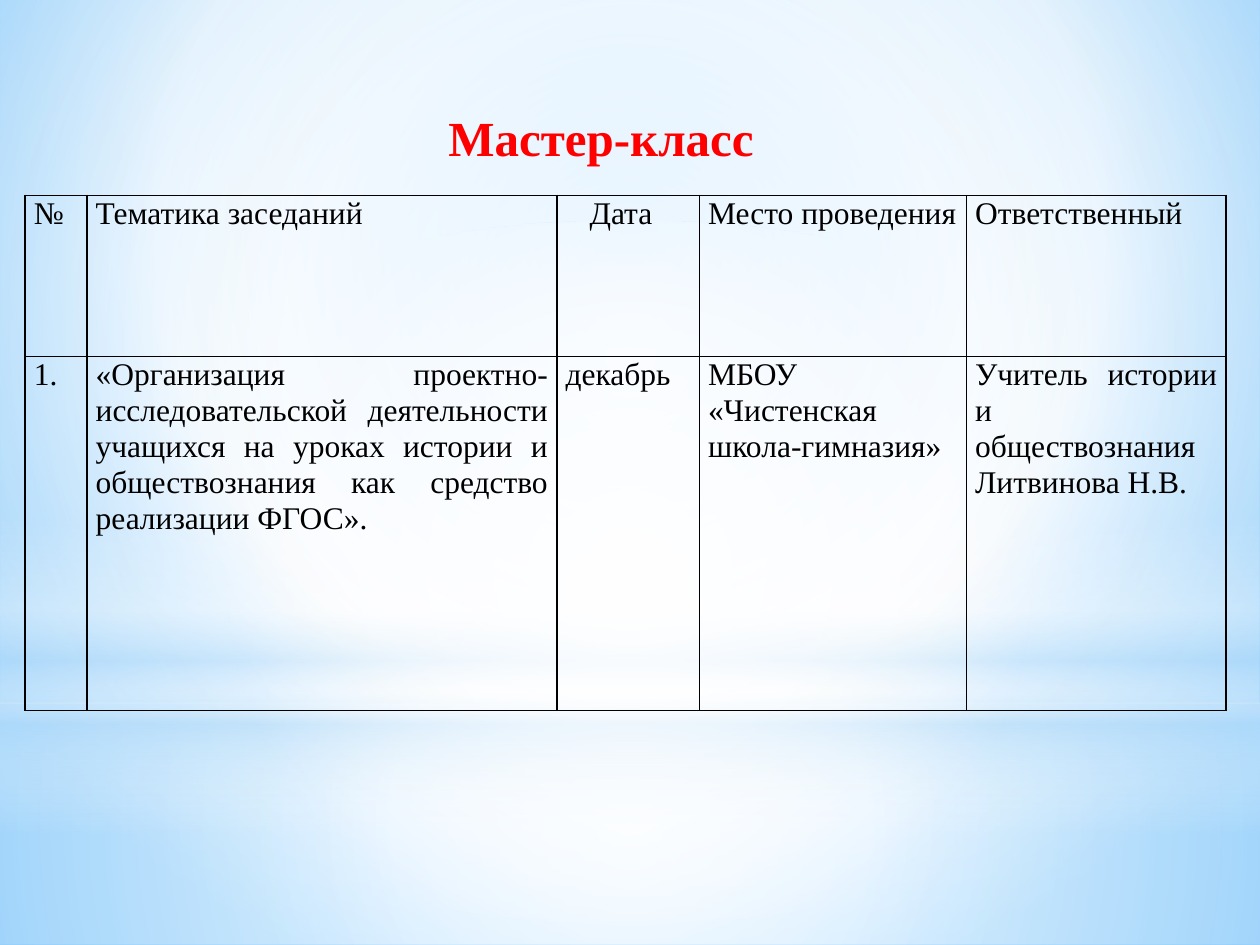
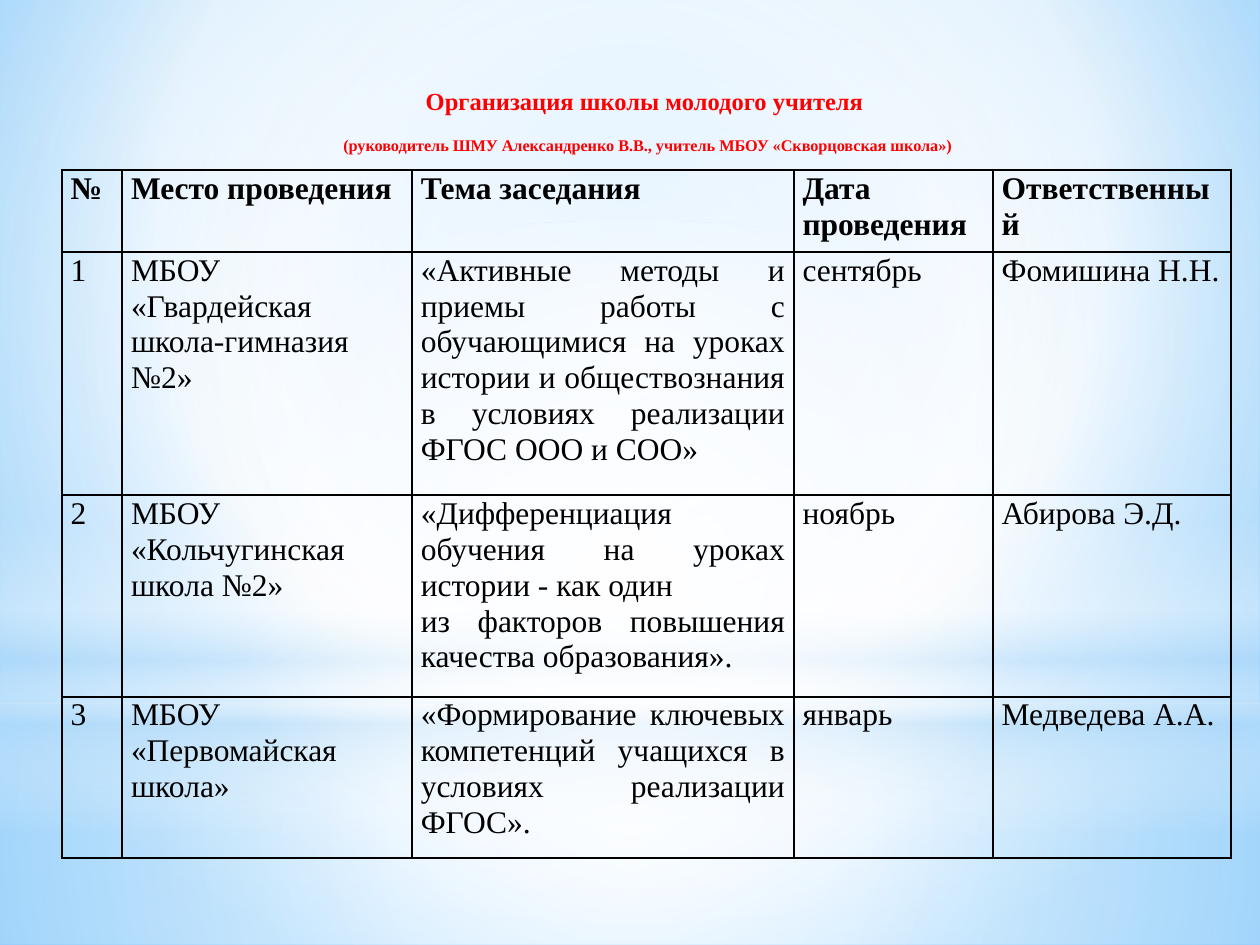
"""Build two slides with timetables of teacher training events."""
from lxml import etree
from pptx import Presentation
from pptx.dml.color import RGBColor
from pptx.enum.shapes import MSO_SHAPE
from pptx.enum.text import MSO_ANCHOR, MSO_AUTO_SIZE, PP_ALIGN
from pptx.oxml.ns import qn
from pptx.util import Inches, Pt

RECTANGLE, OVAL = MSO_SHAPE.RECTANGLE, MSO_SHAPE.OVAL
CENTER, JUSTIFY = PP_ALIGN.CENTER, PP_ALIGN.JUSTIFY
TOP, MIDDLE = MSO_ANCHOR.TOP, MSO_ANCHOR.MIDDLE
NO_AUTOFIT = MSO_AUTO_SIZE.NONE
TITLE_ONLY = 5

FONT = "Times New Roman"
COLORS = {
    "title": "FF0000",
    "text": "000000",
    "white": "FFFFFF",
    "mist": "B4DCFA",
    "sky": "9ED5FF",
    "azure": "5BB9FF",
}

CENTERED = (50, 50, 50, 50)
BACKGROUND = ([(0, "sky", 100), (60, "white", 100), (100, "azure", 100)], (20, 10, 20, 60))
BANDS = [
    (RECTANGLE, (0, 5.58, 10, 1.92),
     [(0, "white", 91), (37, "white", 76), (100, "mist", 79)], CENTERED),
    (RECTANGLE, (0, 0, 10, 5.58),
     [(0, "white", 89), (48, "white", 62), (100, "mist", 79)], CENTERED),
    (RECTANGLE, (0, 4.12, 10, 2.5),
     [(0, "white", 0), (29, "white", 30), (45, "mist", 40),
      (55, "white", 26), (65, "mist", 60), (100, "white", 0)], None),
    (OVAL, (0, 1.75, 10, 5.58), [(0, "white", 100), (56, "white", 0)], CENTERED),
]

SLIDES = [
    {
        "title": [("Мастер-класс", 28)],
        "title_box": (1.27, 0.8, 7, 0.7),
        "anchor": TOP,
        "table_at": (0.2, 1.55),
        "columns": [0.49, 3.73, 1.13, 2.12, 2.06],
        "row_heights": [1.28, 2.81],
        "bold_header": False,
        "indented_header": 2,
        "rows": [
            ["№", "Тематика заседаний", "Дата", "Место проведения", "Ответственный"],
            ["1.",
             "«Организация проектно-исследовательской деятельности учащихся на уроках "
             "истории и обществознания как средство реализации ФГОС».",
             "декабрь", "МБОУ «Чистенская школа-гимназия»",
             "Учитель истории и обществознания Литвинова Н.В."],
        ],
    },
    {
        "title": [
            ("Организация школы молодого учителя ", 14),
            ("(руководитель ШМУ Александренко В.В., учитель МБОУ «Скворцовская школа»)", 9.3),
        ],
        "title_box": (1.22, 0.34, 7.84, 1.23),
        "anchor": MIDDLE,
        "table_at": (0.49, 1.35),
        "columns": [0.48, 2.3, 3.03, 1.58, 1.89],
        "row_heights": [0.65, 1.93, 1.6, 1.28],
        "bold_header": True,
        "indented_header": None,
        "rows": [
            ["№", "Место проведения", "Тема заседания", "Дата проведения", "Ответственный"],
            ["1", "МБОУ «Гвардейская школа-гимназия №2»",
             "«Активные методы и приемы работы с обучающимися на уроках истории и "
             "обществознания в условиях реализации ФГОС ООО и СОО»",
             "сентябрь", "Фомишина Н.Н."],
            ["2", "МБОУ «Кольчугинская школа №2»",
             "«Дифференциация обучения на уроках истории - как один\n"
             "из факторов повышения качества образования».",
             "ноябрь", "Абирова Э.Д."],
            ["3", "МБОУ «Первомайская школа»",
             "«Формирование ключевых компетенций учащихся в условиях реализации ФГОС».",
             "январь", "Медведева А.А."],
        ],
    },
]


def add_node(parent, tag, **attributes):
    node = etree.SubElement(parent, qn(tag))
    for name, value in attributes.items():
        node.set(name, str(value))
    return node


def paint_gradient(fill, owner, stops, focus):
    fill.gradient()
    gradient = owner.find(".//" + qn("a:gradFill"))
    for child in list(gradient):
        gradient.remove(child)
    stop_list = add_node(gradient, "a:gsLst")
    for position, color, opacity in stops:
        stop = add_node(stop_list, "a:gs", pos=position * 1000)
        tint = add_node(stop, "a:srgbClr", val=COLORS[color])
        if opacity < 100:
            add_node(tint, "a:alpha", val=opacity * 1000)
    if focus:
        path_node = add_node(gradient, "a:path", path="circle")
        edges = {side: share * 1000 for side, share in zip("ltrb", focus)}
        add_node(path_node, "a:fillToRect", **edges)
    else:
        add_node(gradient, "a:lin", ang=90 * 60000, scaled=0)


def decorate_layout(layout, slide):
    paint_gradient(layout.background.fill, layout.element, *BACKGROUND)
    for index, (kind, box, stops, focus) in enumerate(BANDS):
        band = slide.shapes.add_shape(kind, *map(Inches, box))
        band.shadow.inherit = False
        band.line.fill.background()
        paint_gradient(band.fill, band.element, stops, focus)
        layout.shapes.element.insert(2 + index, band.element)


def add_text(paragraph, text, size, color, bold, alignment):
    paragraph.alignment = alignment
    run = paragraph.add_run()
    run.text = text
    run.font.name = FONT
    run.font.size = Pt(size)
    run.font.bold = bold
    run.font.color.rgb = RGBColor.from_string(COLORS[color])


def fill_title(slide, content):
    title = slide.shapes.title
    title.left, title.top, title.width, title.height = map(Inches, content["title_box"])
    frame = title.text_frame
    frame.word_wrap = True
    frame.auto_size = NO_AUTOFIT
    frame.vertical_anchor = content["anchor"]
    for index, (text, size) in enumerate(content["title"]):
        paragraph = frame.add_paragraph() if index else frame.paragraphs[0]
        paragraph.space_before = Pt(11 if index else 0)
        add_text(paragraph, text, size, "title", True, CENTER)


def draw_borders(cell):
    properties = cell._tc.get_or_add_tcPr()
    for side in "LRTB":
        line = add_node(properties, "a:ln" + side, w=Pt(1))
        add_node(add_node(line, "a:solidFill"), "a:srgbClr", val=COLORS["text"])


def fill_cell(cell, text, bold):
    draw_borders(cell)
    cell.fill.background()
    cell.margin_left = cell.margin_right = Inches(0.07)
    cell.margin_top = cell.margin_bottom = 0
    frame = cell.text_frame
    for index, line in enumerate(text.split("\n")):
        paragraph = frame.add_paragraph() if index else frame.paragraphs[0]
        paragraph.line_spacing = 1.03
        add_text(paragraph, line, 18, "text", bold, JUSTIFY)


def add_timetable(slide, content):
    rows, widths, heights = content["rows"], content["columns"], content["row_heights"]
    box = (*content["table_at"], sum(widths), sum(heights))
    table = slide.shapes.add_table(len(rows), len(widths), *map(Inches, box)).table
    table.first_row = table.horz_banding = False
    for column, width in zip(table.columns, widths):
        column.width = Inches(width)
    for row_index, (row, height, texts) in enumerate(zip(table.rows, heights, rows)):
        row.height = Inches(height)
        for cell, text in zip(row.cells, texts):
            fill_cell(cell, text, content["bold_header"] and row_index == 0)
    if content["indented_header"] is not None:
        table.cell(0, content["indented_header"]).margin_left = Inches(0.26)


def main():
    presentation = Presentation()
    presentation.slide_width, presentation.slide_height = Inches(10), Inches(7.5)
    layout = presentation.slide_layouts[TITLE_ONLY]
    for index, content in enumerate(SLIDES):
        slide = presentation.slides.add_slide(layout)
        if index == 0:
            decorate_layout(layout, slide)
        fill_title(slide, content)
        add_timetable(slide, content)
    presentation.save("out.pptx")


if __name__ == "__main__":
    main()
